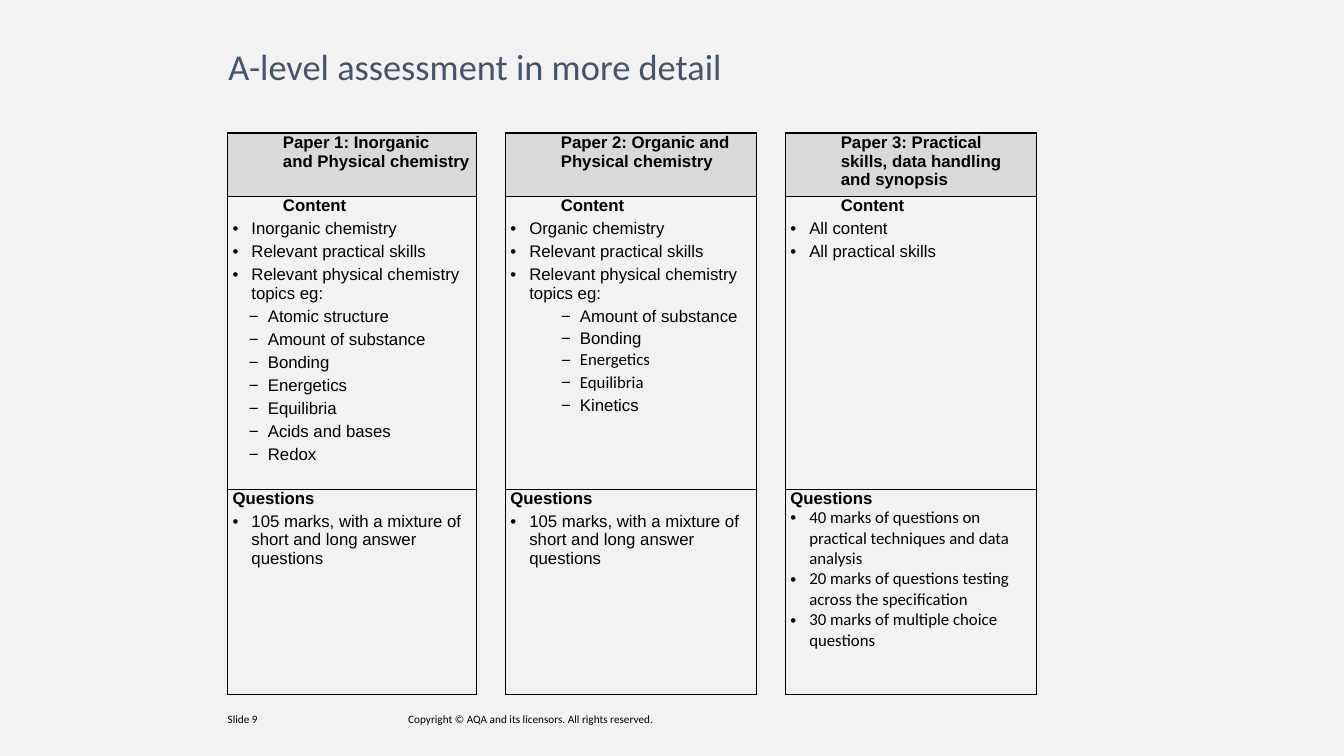
from lxml import etree
from pptx import Presentation
from pptx import util as u
from pptx.dml.color import RGBColor
from pptx.enum import text
from pptx.oxml import ns

Pt = u.Pt
COLORS = {"page": "F2F2F2", "title": "44546A", "ink": "000000", "header": "D9D9D9"}


def style(paragraph, size, font="Arial", color="ink", bold=False):
    paragraph.font.size = Pt(size)
    paragraph.font.name = font
    paragraph.font.bold = bold
    paragraph.font.color.rgb = RGBColor.from_string(COLORS[color])


def indent(paragraph, left, bullet=None):
    props = paragraph._p.get_or_add_pPr()
    props.set("marL", str(Pt(left)))
    props.set("indent", str(Pt(-13.5 if bullet else 0)))
    if bullet:
        etree.SubElement(props, ns.qn("a:buFont")).set("typeface", "Arial")
        etree.SubElement(props, ns.qn("a:buChar")).set("char", bullet)


prs = Presentation()
prs.slide_width, prs.slide_height = Pt(960), Pt(540)
slide = prs.slides.add_slide(prs.slide_layouts[6])
slide.background.fill.solid()
slide.background.fill.fore_color.rgb = RGBColor.from_string(COLORS["page"])

captions = [
    ("A-level assessment in more detail", 156, 31.5, 684, 35, 26, "title"),
    ("Slide 9", 155.5, 505, 112, 27, 8, "ink"),
    ("Copyright © AQA and its licensors. All rights reserved.", 284.5, 505, 211, 19, 8, "ink"),
]
for wording, left, top, width, height, size, color in captions:
    frame = slide.shapes.add_textbox(Pt(left), Pt(top), Pt(width), Pt(height)).text_frame
    frame.word_wrap = True
    if color == "title":
        frame.vertical_anchor = text.MSO_ANCHOR.MIDDLE
        frame.paragraphs[0].line_spacing = 0.9
    frame.paragraphs[0].text = wording
    style(frame.paragraphs[0], size, "Calibri", color)

shared_content = ["Relevant practical skills", "Relevant physical chemistry topics eg:"]
written_questions = ["105 marks, with a mixture of short and long answer questions"]
papers = [
    {
        "heading": "Paper 1: Inorganic\vand Physical chemistry",
        "content": ["Inorganic chemistry"] + shared_content,
        "topics": ["Atomic structure", "Amount of substance", "Bonding", "Energetics",
                   "Equilibria", "Acids and bases", "Redox"],
        "topic_indent": 25.2,
        "topic_spacing": None,
        "calibri": [],
        "questions": written_questions,
        "question_gap": 3,
    },
    {
        "heading": "Paper 2: Organic and Physical chemistry",
        "content": ["Organic chemistry"] + shared_content,
        "topics": ["Amount of substance", "Bonding", "Energetics", "Equilibria", "Kinetics"],
        "topic_indent": 49.7,
        "topic_spacing": Pt(13),
        "calibri": ["Energetics", "Equilibria"],
        "questions": written_questions,
        "question_gap": 3,
    },
    {
        "heading": "Paper 3: Practical skills, data handling and synopsis",
        "content": ["All content", "All practical skills"],
        "topics": [],
        "topic_indent": 0,
        "topic_spacing": None,
        "calibri": [],
        "questions": ["40 marks of questions on practical techniques and data analysis",
                      "20 marks of questions testing across the specification",
                      "30 marks of multiple choice questions"],
        "question_gap": 0,
    },
]
papers[2]["calibri"] = papers[2]["questions"]

widths = [178, 20.5, 179.5, 20.5, 179.5]
heights = [45.4, 209.2, 146.8]
table = slide.shapes.add_table(3, 5, Pt(162.5), Pt(95), Pt(sum(widths)), Pt(sum(heights))).table
table.first_row = False
table.horz_banding = False
for column, width in zip(table.columns, widths):
    column.width = Pt(width)
for row, height in zip(table.rows, heights):
    row.height = Pt(height)

for r, row in enumerate(table.rows):
    for c, cell in enumerate(row.cells):
        is_gap = c % 2 == 1
        cell.margin_left = cell.margin_right = Pt(3.6)
        cell.margin_top = cell.margin_bottom = 0
        cell_props = cell._tc.get_or_add_tcPr()
        for side in ("lnL", "lnR", "lnT", "lnB"):
            line = etree.SubElement(cell_props, ns.qn(f"a:{side}"), w=str(Pt(1)))
            if is_gap and side in ("lnT", "lnB"):
                etree.SubElement(line, ns.qn("a:noFill"))
            else:
                ink = etree.SubElement(line, ns.qn("a:solidFill"))
                etree.SubElement(ink, ns.qn("a:srgbClr"), val=COLORS["ink"])
        if r == 0 and not is_gap:
            cell.fill.solid()
            cell.fill.fore_color.rgb = RGBColor.from_string(COLORS["header"])
        else:
            cell.fill.background()
        if is_gap:
            continue

        paper = papers[c // 2]
        label = [paper["heading"], "Content", "Questions"][r]
        first = cell.text_frame.paragraphs[0]
        first.text = label
        indent(first, 0 if label == "Questions" else 36)
        if label == "Questions":
            first.line_spacing = Pt(13)
        style(first, 12, bold=True)

        bullets = [[], paper["content"], paper["questions"]][r]
        topics = paper["topics"] if label == "Content" else []
        for position, wording in enumerate(bullets + topics):
            is_topic = position >= len(bullets)
            item = cell.text_frame.add_paragraph()
            item.text = wording
            if is_topic:
                item.level = 1
                indent(item, paper["topic_indent"], "−")
                item.line_spacing = paper["topic_spacing"]
            else:
                indent(item, 13.5, "•")
            item.space_before = Pt(paper["question_gap"] if label == "Questions" else 3)
            style(item, 12, "Calibri" if wording in paper["calibri"] else "Arial")

prs.save("out.pptx")
